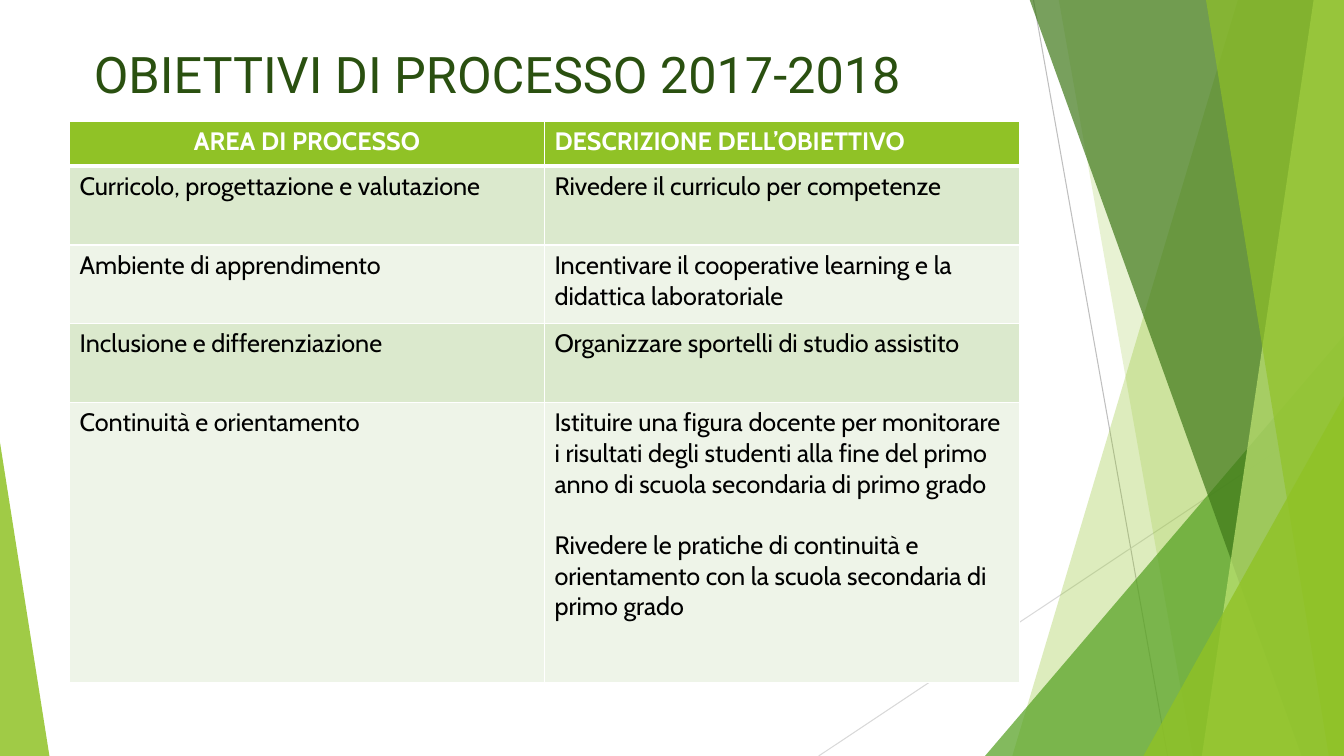
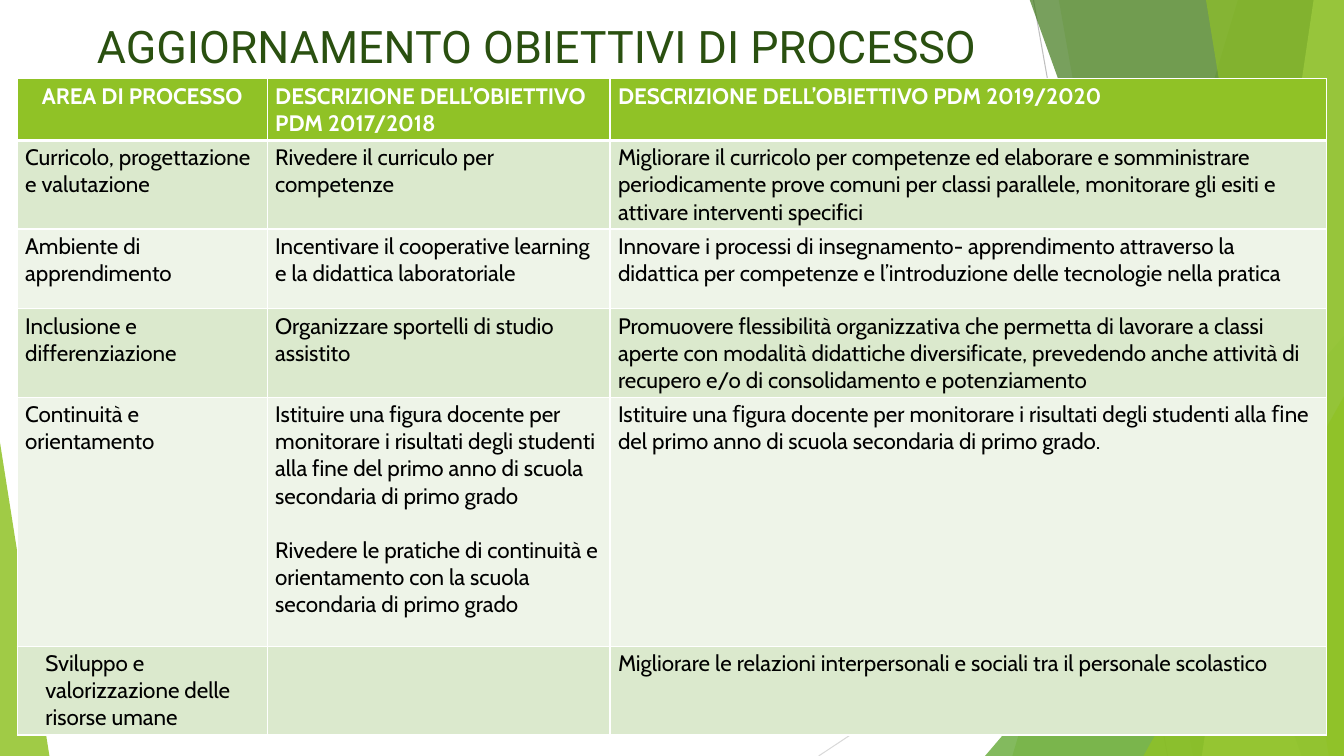
from dataclasses import dataclass

from lxml.etree import SubElement
from pptx import Presentation
from pptx.dml.color import RGBColor
from pptx.enum.shapes import MSO_CONNECTOR, MSO_SHAPE
from pptx.enum.text import PP_ALIGN
from pptx.oxml.ns import qn
from pptx.util import Inches, Pt


@dataclass(frozen=True)
class Theme:
    lime: str = "90C226"
    pale_lime: str = "C0E474"
    green: str = "54A021"
    forest: str = "3F7819"
    title: str = "2A5010"
    text: str = "000000"
    white: str = "FFFFFF"
    bands: tuple = ("EEF4E8", "DBE9CD")
    rules: tuple = ("BFBFBF", "D9D9D9")
    title_font: str = "Roboto"
    body_font: str = "Cabin"
    line_spacing: float = 1.21
    rule_width: float = 0.75
    border: float = 1
    header_border: float = 3


theme = Theme()
SLIDE_W, SLIDE_H, BLEED = 13.33, 7.5, -0.01


def paint(shape, color, opacity):
    """Fill a shape with a translucent colour, without outline or shadow."""
    shape.shadow.inherit = False
    shape.line.fill.background()
    shape.fill.solid()
    shape.fill.fore_color.rgb = RGBColor.from_string(color)
    tint = shape.fill._xPr.find(qn("a:solidFill"))[0]
    SubElement(tint, qn("a:alpha"), val=str(opacity * 1000))


def set_border(cell, side, width):
    edge = SubElement(cell._tc.get_or_add_tcPr(), qn(f"a:ln{side}"), w=str(Pt(width)))
    fill = SubElement(edge, qn("a:solidFill"))
    SubElement(fill, qn("a:srgbClr"), val=theme.white)


prs = Presentation()
prs.slide_width, prs.slide_height = Inches(SLIDE_W), Inches(SLIDE_H)
layout = prs.slide_layouts[6]
for placeholder in list(layout.placeholders):
    layout.shapes.element.remove(placeholder.element)

# Shared background: drawn on the first slide, then moved to the layout
first_slide = prs.slides.add_slide(layout)
scenery = first_slide.shapes

rule_ends = [(10.25, 0, 11.58, SLIDE_H), (SLIDE_W, 4.03, 8.12, SLIDE_H)]
for ends, color in zip(rule_ends, theme.rules):
    rule = scenery.add_connector(MSO_CONNECTOR.STRAIGHT, *map(Inches, ends))
    rule.line.color.rgb = RGBColor.from_string(color)
    rule.line.width = Pt(theme.rule_width)
    SubElement(rule.element.spPr, qn("a:effectLst"))

# A ribbon has the x of its left edge at top and bottom;
# a wedge has left, top, width and the position of its apex
facets = [
    ("ribbon", (12.28, 10.04), theme.lime, 30),
    ("ribbon", (10.5, 11.83), theme.lime, 20),
    ("wedge", (9.77, 3.33, 3.56, 1), theme.green, 72),
    ("ribbon", (10.21, 12.91), theme.forest, 70),
    ("ribbon", (13.03, 11.92), theme.pale_lime, 70),
    ("ribbon", (11.96, 13.18), theme.lime, 65),
    ("wedge", (11.34, 3.93, 1.99, 1), theme.lime, 80),
    ("wedge", (0, 4.39, 0.49, 0), theme.lime, 85),
]
for kind, geometry, color, opacity in facets:
    if kind == "ribbon":
        top_x, bottom_x = geometry
        outline = scenery.build_freeform(Inches(top_x), Inches(BLEED))
        corners = [(SLIDE_W, BLEED), (SLIDE_W, SLIDE_H), (bottom_x, SLIDE_H)]
        outline.add_line_segments([(Inches(x), Inches(y)) for x, y in corners])
        facet = outline.convert_to_shape()
    else:
        left, top, width, apex = geometry
        facet = scenery.add_shape(
            MSO_SHAPE.ISOSCELES_TRIANGLE,
            Inches(left), Inches(top), Inches(width), Inches(SLIDE_H - top),
        )
        facet.adjustments[0] = apex
    paint(facet, color, opacity)

for shape in list(scenery):
    layout.shapes.element.append(shape.element)

# Contents
areas = [
    "Curricolo, progettazione e valutazione",
    "Ambiente di apprendimento",
    "Inclusione e differenziazione",
    "Continuità e orientamento",
]
goals_2017 = [
    "Rivedere il curriculo per competenze",
    "Incentivare il cooperative learning e la didattica laboratoriale",
    "Organizzare sportelli di studio assistito",
    "Istituire una figura docente per monitorare i risultati degli studenti alla fine "
    "del primo anno di scuola secondaria di primo grado\n"
    "Rivedere le pratiche di continuità e orientamento con la scuola secondaria di primo grado",
]
goals_2019 = [
    "Migliorare il curricolo per competenze ed elaborare e somministrare periodicamente "
    "prove comuni per classi parallele, monitorare gli esiti e attivare interventi specifici",
    "Innovare i processi di insegnamento- apprendimento attraverso la didattica per "
    "competenze e l’introduzione delle tecnologie nella pratica",
    "Promuovere flessibilità organizzativa che permetta di lavorare a classi aperte con "
    "modalità didattiche diversificate, prevedendo anche attività di recupero e/o di "
    "consolidamento e potenziamento",
    "Istituire una ﬁgura docente per monitorare i risultati degli studenti alla ﬁne del "
    "primo anno di scuola secondaria di primo grado.",
]
new_area = "Sviluppo e valorizzazione delle risorse umane"
new_goal = "Migliorare le relazioni interpersonali e sociali tra il personale scolastico"
area_heading, goal_heading = "AREA DI PROCESSO", "DESCRIZIONE DELL’OBIETTIVO"

pages = [
    dict(
        slide=first_slide,
        title="OBIETTIVI DI PROCESSO 2017-2018",
        title_box=(0, 0.38, 9.87, 0.71), title_size=36,
        origin=(0.69, 1.2), body_size=18, margins=(0.1, 0.05),
        columns=[4.71, 4.71], heights=[0.45, 0.78, 0.78, 0.78, 2.78],
        rows=[(area_heading, goal_heading), *zip(areas, goals_2017)],
    ),
    dict(
        slide=prs.slides.add_slide(layout),
        title="AGGIORNAMENTO OBIETTIVI DI PROCESSO",
        title_box=(0.39, 0.14, 9.87, 0.64), title_size=32,
        origin=(0.17, 0.78), body_size=16, margins=(0.08, 0.04),
        columns=[2.48, 3.4, 7.11], heights=[0.52, 0.79, 0.79, 0.79, 2.47, 0.79],
        rows=[
            (area_heading, f"{goal_heading} PDM 2017/2018", f"{goal_heading} PDM 2019/2020"),
            *zip(areas, goals_2017, goals_2019),
            (new_area, "", new_goal),
        ],
    ),
]

for page in pages:
    shapes = page["slide"].shapes
    title = shapes.add_textbox(*map(Inches, page["title_box"])).text_frame
    title.word_wrap = True
    title.text = page["title"]
    heading = title.paragraphs[0]
    heading.alignment = PP_ALIGN.CENTER
    heading.font.name = theme.title_font
    heading.font.size = Pt(page["title_size"])
    heading.font.color.rgb = RGBColor.from_string(theme.title)

    columns, heights = page["columns"], page["heights"]
    goals = shapes.add_table(
        len(heights), len(columns), *map(Inches, page["origin"]),
        Inches(sum(columns)), Inches(sum(heights)),
    ).table
    for column, width in zip(goals.columns, columns):
        column.width = Inches(width)

    margin_x, margin_y = map(Inches, page["margins"])
    for r, (texts, height) in enumerate(zip(page["rows"], heights)):
        goals.rows[r].height = Inches(height)
        is_header = r == 0
        for c, text in enumerate(texts):
            cell = goals.cell(r, c)
            cell.margin_left = cell.margin_right = margin_x
            cell.margin_top = cell.margin_bottom = margin_y
            if text == new_area:
                cell.margin_left = margin_x + Inches(0.2)
            for side in "LRTB":
                under_header = (r, side) in [(0, "B"), (1, "T")]
                set_border(cell, side, theme.header_border if under_header else theme.border)
            cell.fill.solid()
            cell.fill.fore_color.rgb = RGBColor.from_string(
                theme.lime if is_header else theme.bands[r % 2]
            )
            cell.text = text
            for i, paragraph in enumerate(cell.text_frame.paragraphs):
                if i > 0:
                    paragraph.space_before = Pt(page["body_size"] * theme.line_spacing)
                if is_header and c == 0:
                    paragraph.alignment = PP_ALIGN.CENTER
                paragraph.font.name = theme.body_font
                paragraph.font.size = Pt(page["body_size"])
                paragraph.font.bold = is_header
                paragraph.font.color.rgb = RGBColor.from_string(
                    theme.white if is_header else theme.text
                )

prs.save("out.pptx")
